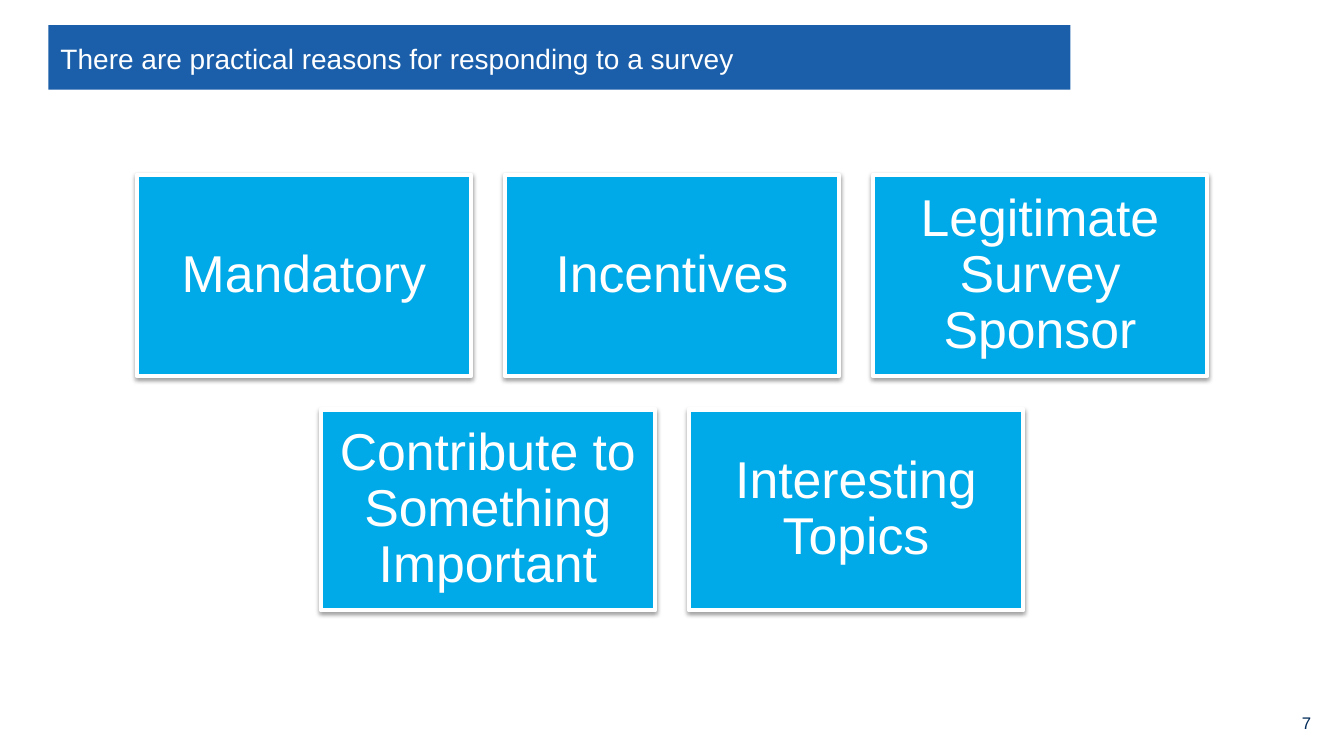
from dataclasses import dataclass

from lxml import etree
from pptx import Presentation
from pptx.dml.color import RGBColor
from pptx.enum import shapes, text
from pptx.oxml import ns
from pptx.util import Pt


@dataclass(frozen=True)
class Theme:
    font: str = "Arial"
    bar: str = "1B5FAA"
    card: str = "00A9E7"
    light: str = "FFFFFF"
    number: str = "002A59"
    shadow: str = "000000"
    title_size: float = 20
    card_size: float = 37
    number_size: float = 12


class SlideBuilder:
    def __init__(self, slide, theme):
        self.slide = slide
        self.theme = theme

    def set_text(self, frame, wording, size, color, align, inset=None):
        frame.text = wording
        frame.word_wrap = True
        frame.auto_size = text.MSO_AUTO_SIZE.NONE
        frame.vertical_anchor = text.MSO_ANCHOR.MIDDLE
        if inset is not None:
            frame.margin_left = frame.margin_right = Pt(inset)
            frame.margin_top = frame.margin_bottom = Pt(inset)
        paragraph = frame.paragraphs[0]
        paragraph.alignment = align
        for run in paragraph.runs:
            run.font.name = self.theme.font
            run.font.size = Pt(size)
            run.font.color.rgb = RGBColor.from_string(color)
        return paragraph

    def rectangle(self, left, top, width, height, fill):
        shape = self.slide.shapes.add_shape(
            shapes.MSO_SHAPE.RECTANGLE, Pt(left), Pt(top), Pt(width), Pt(height))
        shape.shadow.inherit = False
        shape.fill.solid()
        shape.fill.fore_color.rgb = RGBColor.from_string(fill)
        shape.line.fill.background()
        return shape

    def title(self, wording):
        self.rectangle(34.6, 18, 730, 46, self.theme.bar)
        heading = self.slide.shapes.title
        heading.left, heading.top = Pt(36), Pt(18)
        heading.width, heading.height = Pt(733), Pt(47.5)
        self.set_text(heading.text_frame, wording, self.theme.title_size,
                      self.theme.light, text.PP_ALIGN.LEFT)
        # The heading must lie in front of its bar.
        self.slide.shapes._spTree.append(heading._element)

    def card(self, wording, left, top, width, height):
        card = self.rectangle(left, top, width, height, self.theme.card)
        card.line.color.rgb = RGBColor.from_string(self.theme.light)
        card.line.width = Pt(3)
        self.drop_shadow(card)
        paragraph = self.set_text(card.text_frame, wording, self.theme.card_size,
                                  self.theme.light, text.PP_ALIGN.CENTER, inset=10.8)
        paragraph.line_spacing = 0.9

    def drop_shadow(self, shape):
        effects = shape._element.spPr.find(ns.qn("a:effectLst"))
        shadow = etree.SubElement(
            effects, ns.qn("a:outerShdw"), blurRad=str(Pt(3.15)), dist=str(Pt(1.6)),
            dir="5400000", rotWithShape="0")
        color = etree.SubElement(shadow, ns.qn("a:srgbClr"), val=self.theme.shadow)
        etree.SubElement(color, ns.qn("a:alpha"), val="38000")

    def card_rows(self, rows, center, top, width, height, gap):
        """Lay out rows of cards, each row centred on the same axis."""
        for row_index, row in enumerate(rows):
            row_width = len(row) * (width + gap) - gap
            for column, wording in enumerate(row):
                self.card(wording, center - row_width / 2 + column * (width + gap),
                          top + row_index * (height + gap), width, height)

    def page_number(self, number):
        box = self.slide.shapes.add_textbox(Pt(895.7), Pt(504), Pt(48), Pt(24))
        self.set_text(box.text_frame, number, self.theme.number_size,
                      self.theme.number, text.PP_ALIGN.RIGHT)


def main():
    deck = Presentation()
    deck.slide_width, deck.slide_height = Pt(960), Pt(540)
    title_only = deck.slide_layouts[5]
    builder = SlideBuilder(deck.slides.add_slide(title_only), Theme())
    builder.title("There are practical reasons for responding to a survey")
    reasons = [
        ["Mandatory", "Incentives", "Legitimate Survey Sponsor"],
        ["Contribute to Something Important", "Interesting Topics"],
    ]
    builder.card_rows(reasons, center=480, top=125.2, width=239, height=143.4, gap=23.9)
    builder.page_number("7")
    deck.save("out.pptx")


if __name__ == "__main__":
    main()
